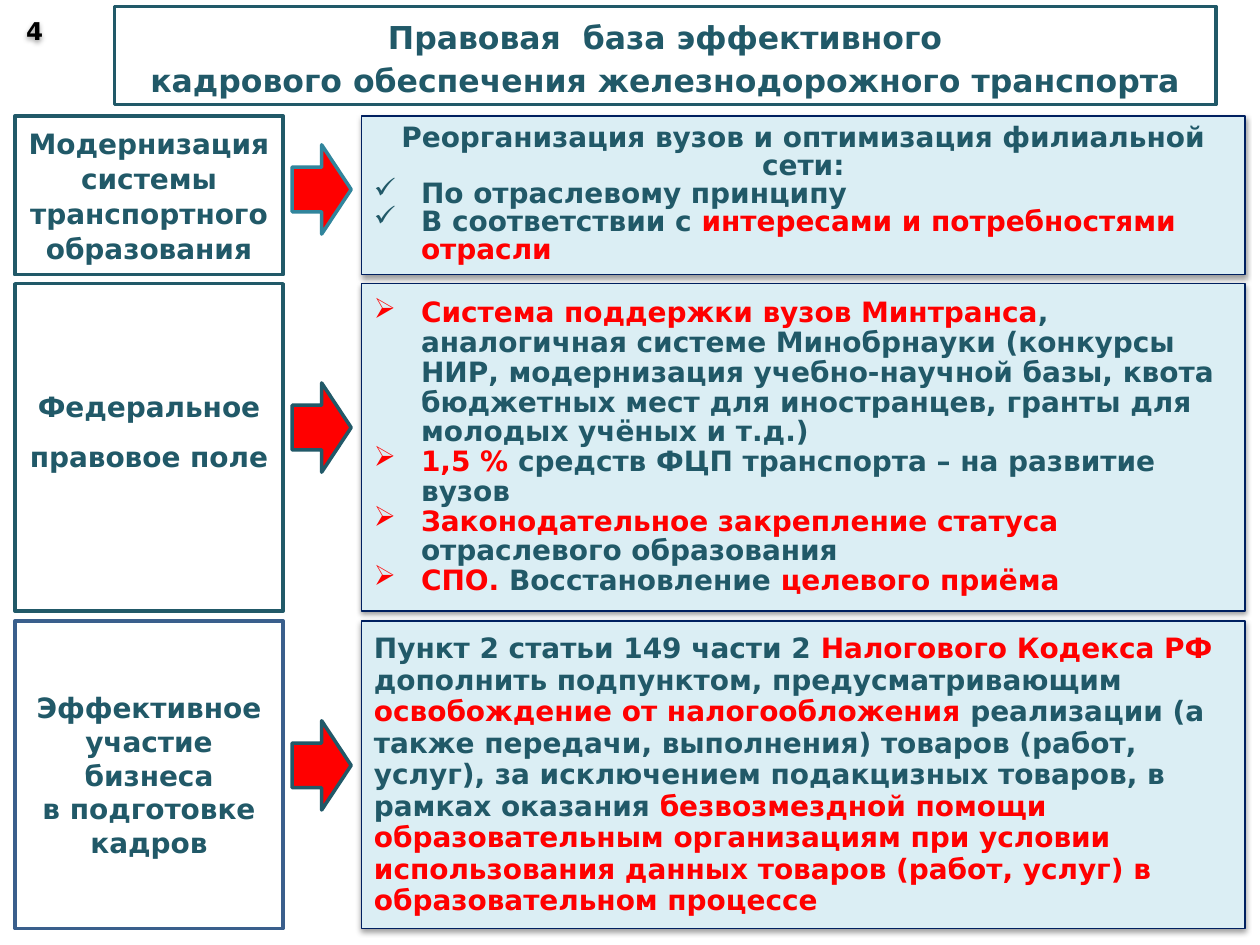
import pptx
import pptx.util
import pptx.dml.color
import pptx.enum.shapes
import pptx.enum.text
import pptx.oxml
import pptx.oxml.ns
from pptx.util import Cm

TEAL, RED, NAVY, PALE, WHITE = "215968", "FF0000", "002060", "DBEEF4", "FFFFFF"
SHAPES = pptx.enum.shapes.MSO_SHAPE
ALIGN = pptx.enum.text.PP_ALIGN
NAMESPACES = pptx.oxml.ns.nsdecls("a")


def color(value):
    return pptx.dml.color.RGBColor.from_string(value)


def add_shadow(shape):
    """Replace the shape's inherited effects with a soft downward shadow."""
    shape.shadow.inherit = False
    effects = shape._element.spPr.find(pptx.oxml.ns.qn("a:effectLst"))
    effects.append(pptx.oxml.parse_xml(
        f'<a:outerShdw {NAMESPACES} blurRad="{pptx.util.Pt(3.1)}" '
        f'dist="{pptx.util.Pt(1.6)}" dir="5400000" rotWithShape="0">'
        '<a:srgbClr val="000000"><a:alpha val="38000"/></a:srgbClr>'
        '</a:outerShdw>'))


def add_bullet(paragraph, symbol):
    """Give the paragraph a bullet with a hanging indent."""
    properties = paragraph._p.get_or_add_pPr()
    properties.set("marL", str(Cm(0.95)))
    properties.set("indent", str(-Cm(0.95)))
    properties.append(pptx.oxml.parse_xml(
        f'<a:buChar {NAMESPACES} char="{symbol}"/>'))


class SlideBuilder:
    font = "DejaVu Sans"

    def __init__(self, slide):
        self.slide = slide

    def shape(self, kind, left, top, width, height, fill, line, line_width=2):
        shape = self.slide.shapes.add_shape(
            kind, Cm(left), Cm(top), Cm(width), Cm(height))
        shape.shadow.inherit = False
        shape.fill.solid()
        shape.fill.fore_color.rgb = color(fill)
        shape.line.color.rgb = color(line)
        shape.line.width = pptx.util.Pt(line_width)
        return shape

    def add_text(self, shape, lines, size=16, spacing=None, align=ALIGN.CENTER,
                 text_color=TEAL):
        """Fill the shape with paragraphs; parts between asterisks are red."""
        frame = shape.text_frame
        frame.word_wrap = True
        frame.vertical_anchor = pptx.enum.text.MSO_ANCHOR.MIDDLE
        frame.text = "\n".join(lines)
        for paragraph, line in zip(frame.paragraphs, lines):
            paragraph.alignment = align
            paragraph.line_spacing = spacing
            paragraph.text = ""
            for index, part in enumerate(line.split("*")):
                if not part:
                    continue
                run = paragraph.add_run()
                run.text = part
                run.font.name = self.font
                run.font.size = pptx.util.Pt(size)
                run.font.bold = True
                run.font.color.rgb = color(RED if index % 2 else text_color)
        return frame

    def title(self, lines):
        shape = self.shape(SHAPES.RECTANGLE, 2.31, 0.13, 22.2, 1.98, WHITE, TEAL)
        frame = self.add_text(shape, lines, size=18, spacing=pptx.util.Pt(24.8))
        frame.margin_left = frame.margin_right = Cm(0.15)
        frame.margin_top = frame.margin_bottom = Cm(0.08)

    def number(self, text):
        box = self.slide.shapes.add_textbox(Cm(0.3), Cm(0.1), Cm(0.8), Cm(1.02))
        frame = self.add_text(box, [text], size=14, text_color="000000")
        frame.margin_left = frame.margin_right = 0
        add_shadow(box)

    def topic(self, top, height, lines, spacing, line=TEAL):
        shape = self.shape(SHAPES.RECTANGLE, 0.3, top, 5.41, height, WHITE, line)
        return self.add_text(shape, lines, spacing=spacing)

    def arrow(self, top, line=TEAL):
        self.shape(SHAPES.RIGHT_ARROW, 5.89, top, 1.19, 1.8, RED, line)

    def panel(self, top, height, lines, spacing):
        shape = self.shape(SHAPES.RECTANGLE, 7.29, top, 17.81, height,
                           PALE, NAVY, 0.75)
        add_shadow(shape)
        return self.add_text(shape, lines, spacing=pptx.util.Pt(spacing),
                             align=ALIGN.LEFT)


def main():
    presentation = pptx.Presentation()
    presentation.slide_width, presentation.slide_height = Cm(25.4), Cm(19.05)
    builder = SlideBuilder(
        presentation.slides.add_slide(presentation.slide_layouts[6]))

    builder.title(["Правовая  база эффективного",
                   "кадрового обеспечения железнодорожного транспорта"])
    builder.number("4")

    top, height = 2.34, 3.2
    builder.topic(top, height,
                  ["Модернизация системы транспортного образования"],
                  pptx.util.Pt(20))
    builder.arrow(2.92, "31859C")
    heading, *points = builder.panel(top, height, [
        "Реорганизация вузов и оптимизация филиальной сети:",
        "По отраслевому принципу",
        "В соответствии с *интересами и потребностями отрасли*",
    ], 16).paragraphs
    heading.alignment = ALIGN.CENTER
    for paragraph in points:
        add_bullet(paragraph, "✓")

    top, height = 5.72, 6.6
    frame = builder.topic(top, height, ["Федеральное", "правовое поле"], 1.5)
    frame.margin_bottom = Cm(1.1)
    builder.arrow(7.72)
    measures = builder.panel(top, height, [
        "*Система поддержки вузов Минтранса*, аналогичная системе Минобрнауки "
        "(конкурсы НИР, модернизация учебно-научной базы, квота бюджетных мест "
        "для иностранцев, гранты для молодых учёных и т.д.)",
        "*1,5 % *средств ФЦП транспорта – на развитие вузов",
        "*Законодательное закрепление статуса *отраслевого образования",
        "*СПО. *Восстановление *целевого приёма*",
    ], 17).paragraphs
    for paragraph in measures:
        add_bullet(paragraph, "➢")

    top, height = 12.52, 6.2
    builder.topic(top, height, ["Эффективное", "участие", "бизнеса",
                                "в подготовке", "кадров"], None, "3A5F8C")
    builder.arrow(14.53)
    builder.panel(top, height, [
        "Пункт 2 статьи 149 части 2 *Налогового Кодекса РФ *дополнить "
        "подпунктом, предусматривающим *освобождение от налогообложения "
        "*реализации (а также передачи, выполнения) товаров (работ, услуг), за "
        "исключением подакцизных товаров, в рамках оказания *безвозмездной "
        "помощи образовательным организациям при условии использования данных "
        "товаров (работ, услуг) в образовательном процессе*",
    ], 18)

    presentation.save("out.pptx")


if __name__ == "__main__":
    main()
